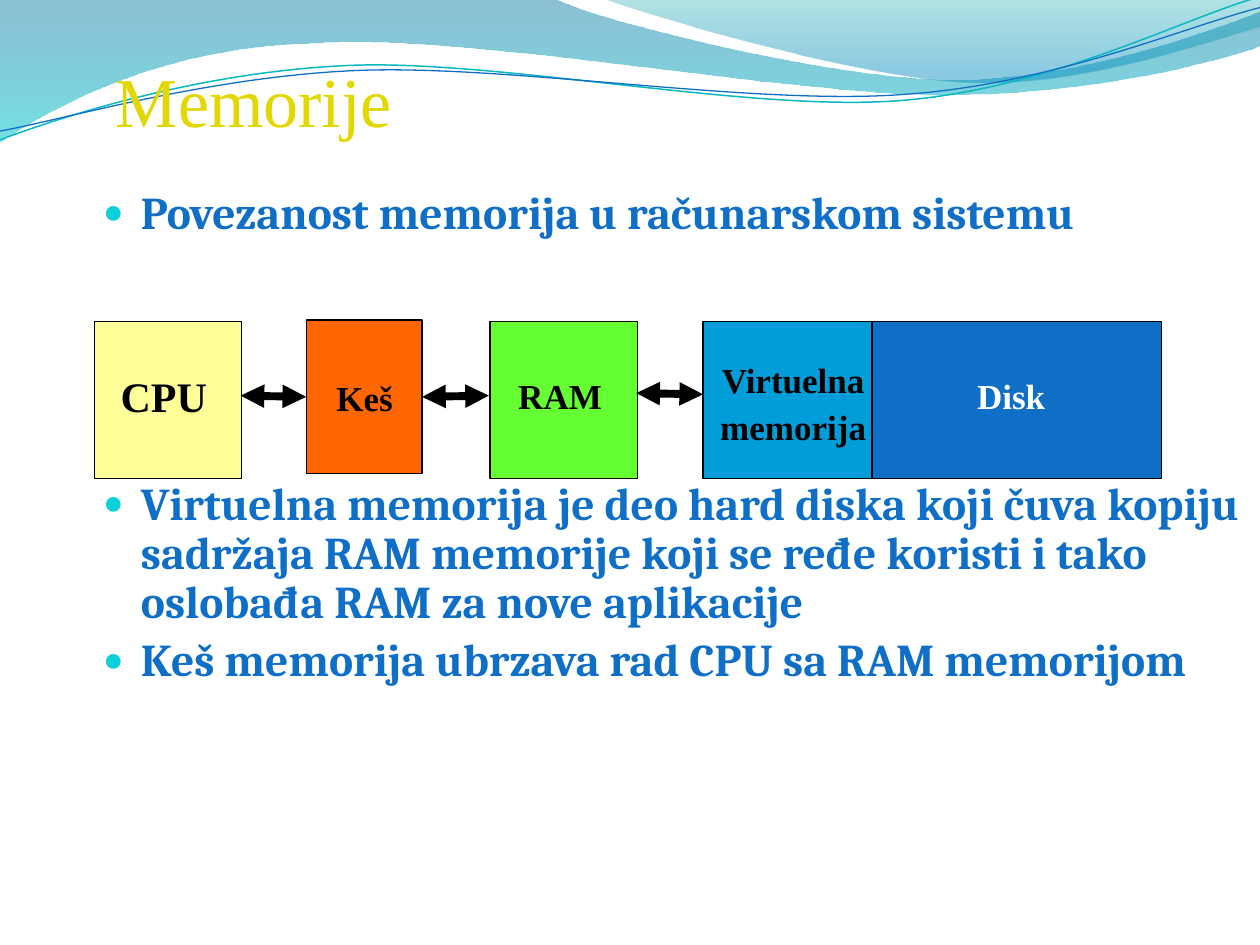
from dataclasses import dataclass
from typing import Optional

from lxml import etree
from pptx import Presentation
from pptx.dml.color import RGBColor
from pptx.enum.shapes import MSO_CONNECTOR, MSO_SHAPE
from pptx.enum.text import MSO_ANCHOR, MSO_AUTO_SIZE, PP_ALIGN
from pptx.oxml.ns import qn
from pptx.shapes.autoshape import Shape
from pptx.slide import Slide
from pptx.text.text import TextFrame
from pptx.util import Inches, Pt

RECTANGLE = MSO_SHAPE.RECTANGLE
STRAIGHT = MSO_CONNECTOR.STRAIGHT
LEFT, CENTER = PP_ALIGN.LEFT, PP_ALIGN.CENTER
TOP, BOTTOM = MSO_ANCHOR.TOP, MSO_ANCHOR.BOTTOM
NO_FIT, GROW = MSO_AUTO_SIZE.NONE, MSO_AUTO_SIZE.SHAPE_TO_FIT_TEXT
LEFT_SIDE, RIGHT_SIDE = 1, 3
TITLE_ONLY = 5


@dataclass(frozen=True)
class Theme:
    title: str = "E2D700"
    body: str = "0F6FC6"
    bullet: str = "0BD0D9"
    black: str = "000000"
    white: str = "FFFFFF"
    title_size: int = 40
    body_size: int = 26
    cpu_size: int = 24
    label_size: int = 20
    label_font: str = "Times New Roman"
    body_font: str = "Cambria"
    outline: float = 0.75
    arrow: float = 4.5


@dataclass(frozen=True)
class Stop:
    position: float
    color: str
    opacity: int


@dataclass(frozen=True)
class Wave:
    segments: list[tuple[float, ...]]
    stops: tuple[Stop, ...] = ()
    line: str = ""
    weight: float = 0


@dataclass(frozen=True)
class Block:
    left: float
    top: float
    width: float
    height: float
    fill: str
    text: str
    label: tuple[float, float, float, float]
    size: int = Theme.label_size
    color: str = Theme.black


@dataclass(frozen=True)
class Arrow:
    start: tuple[float, float]
    end: tuple[float, float]
    start_block: Optional[str] = None
    end_block: Optional[str] = None


THEME = Theme()
WAVES = [
    Wave([(0, 0), (4.4, -0.01), (4.76, 0.17, 6.64, 0.63, 7.58, 0.63),
          (8.53, 0.63, 9.58, 0.26, 10, 0.09), (10.01, 0.36),
          (9.83, 0.44, 8.7, 0.76, 7.46, 0.75), (6.22, 0.75, 3.82, 0.28, 2.57, 0.34),
          (1.29, 0.36, 0.46, 0.83, -0.01, 1.13), (0, 0)],
         stops=(Stop(0, "0074A1", 45), Stop(1, "00C6CF", 55))),
    Wave([(4.79, -0.01), (5.09, 0.11, 6.82, 0.62, 7.69, 0.65),
          (8.56, 0.69, 9.61, 0.32, 10, 0.21), (10, 0), (4.79, -0.01)],
         stops=(Stop(0, "00A1A9", 30), Stop(0.8, "008BBF", 45))),
    Wave([(0, 1.11), (0.48, 0.93, 1.58, 0.57, 2.77, 0.52),
          (3.95, 0.47, 5.93, 0.89, 7.13, 0.8), (8.33, 0.71, 9.38, 0.15, 9.98, -0.02)],
         line="0AB8BF", weight=0.85),
    Wave([(0, 1.04), (0.47, 0.96, 1.64, 0.61, 2.83, 0.56),
          (4.03, 0.51, 5.97, 0.84, 7.17, 0.75), (8.36, 0.67, 9.41, 0.21, 10, 0.06)],
         line="0F6FC6", weight=0.75),
]
BLOCKS = [
    Block(0.75, 2.55, 1.17, 1.25, "FFFF99", "CPU", (0.8, 2.89, 1, 0.5), THEME.cpu_size),
    Block(2.43, 2.54, 0.92, 1.22, "FF6600", "Keš", (2.48, 2.94, 0.83, 0.43)),
    Block(3.89, 2.55, 1.17, 1.25, "66FF33", "RAM", (3.89, 2.92, 1.11, 0.43)),
    Block(5.58, 2.55, 1.38, 1.25, "009DD9", "Virtuelna\nmemorija", (5.6, 2.89, 1.39, 0.73)),
    Block(6.92, 2.55, 2.3, 1.25, "0F6FC6", "Disk", (7.47, 2.92, 1.11, 0.43),
          color=THEME.white),
]
ARROWS = [
    Arrow((1.91, 3.14), (2.43, 3.14), end_block="Keš"),
    Arrow((3.34, 3.14), (3.88, 3.14), start_block="Keš"),
    Arrow((5.05, 3.12), (5.58, 3.13)),
]
BODY = """Povezanost memorija u računarskom sistemu
Virtuelna memorija je deo hard diska koji čuva kopiju sadržaja RAM memorije koji se ređe koristi i tako oslobađa RAM za nove aplikacije
Keš memorija ubrzava rad CPU sa RAM memorijom"""


def rgb(color: str) -> RGBColor:
    return RGBColor.from_string(color)


def write(frame: TextFrame, text: str, *, size: int, color: str, font: str,
          bold: bool = True, align: PP_ALIGN = CENTER, anchor: MSO_ANCHOR = TOP,
          fit: MSO_AUTO_SIZE = NO_FIT, spacing: float = 1.0,
          gaps: tuple[float, ...] = (0,)) -> None:
    frame.word_wrap = True
    frame.auto_size = fit
    frame.vertical_anchor = anchor
    frame.text = text
    for para, gap in zip(frame.paragraphs, gaps):
        para.alignment = align
        para.line_spacing = spacing
        para.space_before = Pt(gap)
        for span in para.runs:
            span.font.size = Pt(size)
            span.font.name = font
            span.font.bold = bold
            span.font.color.rgb = rgb(color)


def add_bullets(frame: TextFrame) -> None:
    for para in frame.paragraphs:
        properties = para._p.get_or_add_pPr()
        properties.set("marL", str(Inches(0.3)))
        properties.set("indent", str(Inches(-0.3)))
        color = etree.SubElement(properties, qn("a:buClr"))
        etree.SubElement(color, qn("a:srgbClr"), val=THEME.bullet)
        etree.SubElement(properties, qn("a:buSzPct"), val="75000")
        etree.SubElement(properties, qn("a:buFont"), typeface="Arial")
        etree.SubElement(properties, qn("a:buChar"), char="●")


def bend(shape: Shape, segments: list[tuple[float, ...]]) -> None:
    steps = iter(list(shape.element.iter(qn("a:lnTo"))))
    for segment in segments:
        first = next(steps)
        if len(segment) == 2:
            continue
        curve = etree.Element(qn("a:cubicBezTo"))
        first.addprevious(curve)
        for step in (first, next(steps), next(steps)):
            curve.append(step[0])
            step.getparent().remove(step)


def add_wave(page: Slide, wave: Wave) -> None:
    points = [(Inches(segment[i]), Inches(segment[i + 1]))
              for segment in wave.segments for i in range(0, len(segment), 2)]
    builder = page.shapes.build_freeform(*points[0])
    builder.add_line_segments(points[1:], close=bool(wave.stops))
    shape = builder.convert_to_shape()
    bend(shape, wave.segments[1:])
    shape.shadow.inherit = False
    if not wave.stops:
        shape.fill.background()
        shape.line.color.rgb = rgb(wave.line)
        shape.line.width = Pt(wave.weight)
        return
    shape.line.fill.background()
    shape.fill.gradient()
    shape.fill.gradient_angle = 270
    for target, stop in zip(shape.fill.gradient_stops, wave.stops):
        target.position = stop.position
        target.color.rgb = rgb(stop.color)
    for color, stop in zip(shape.element.iter(qn("a:srgbClr")), wave.stops):
        etree.SubElement(color, qn("a:alpha"), val=str(stop.opacity * 1000))


def add_block(page: Slide, block: Block) -> Shape:
    place = (block.left, block.top, block.width, block.height)
    box = page.shapes.add_shape(RECTANGLE, *map(Inches, place))
    box.shadow.inherit = False
    box.fill.solid()
    box.fill.fore_color.rgb = rgb(block.fill)
    box.line.color.rgb = rgb(THEME.black)
    box.line.width = Pt(THEME.outline)
    return box


def add_label(page: Slide, block: Block) -> None:
    label = page.shapes.add_textbox(*map(Inches, block.label))
    write(label.text_frame, block.text, size=block.size, color=block.color,
          font=THEME.label_font, fit=GROW, gaps=(0, 10),
          spacing=0.7 if "\n" in block.text else 1.0)


def add_arrow(page: Slide, arrow: Arrow, boxes: dict[str, Shape]) -> None:
    line = page.shapes.add_connector(STRAIGHT, *map(Inches, arrow.start + arrow.end))
    if arrow.start_block:
        line.begin_connect(boxes[arrow.start_block], RIGHT_SIDE)
    if arrow.end_block:
        line.end_connect(boxes[arrow.end_block], LEFT_SIDE)
    line.line.color.rgb = rgb(THEME.black)
    line.line.width = Pt(THEME.arrow)
    for tag in ("a:headEnd", "a:tailEnd"):
        etree.SubElement(line.line._get_or_add_ln(), qn(tag), type="triangle")
    etree.SubElement(line.element.spPr, qn("a:effectLst"))


def add_title(page: Slide) -> None:
    title = page.shapes.title
    page.shapes.element.append(title.element)
    title.left, title.top, title.width, title.height = map(Inches, (0.92, 0.26, 8.5, 0.86))
    frame = title.text_frame
    frame.margin_left = frame.margin_right = frame.margin_bottom = 0
    write(frame, "Memorije", size=THEME.title_size, color=THEME.title,
          font=THEME.label_font, bold=False, align=LEFT, anchor=BOTTOM)


def add_body(page: Slide) -> None:
    body = page.shapes.add_textbox(*map(Inches, (0.72, 1.46, 9.28, 5.79)))
    write(body.text_frame, BODY, size=THEME.body_size, color=THEME.body,
          font=THEME.body_font, align=LEFT, spacing=0.9, gaps=(0, 138.2, 5.2))
    add_bullets(body.text_frame)


def main() -> None:
    deck = Presentation()
    deck.slide_width, deck.slide_height = Inches(10), Inches(7.5)
    page = deck.slides.add_slide(deck.slide_layouts[TITLE_ONLY])
    for wave in WAVES:
        add_wave(page, wave)
    add_title(page)
    add_body(page)
    boxes = {block.text: add_block(page, block) for block in BLOCKS}
    for arrow in ARROWS:
        add_arrow(page, arrow, boxes)
    for block in BLOCKS:
        add_label(page, block)
    deck.save("out.pptx")


if __name__ == "__main__":
    main()
